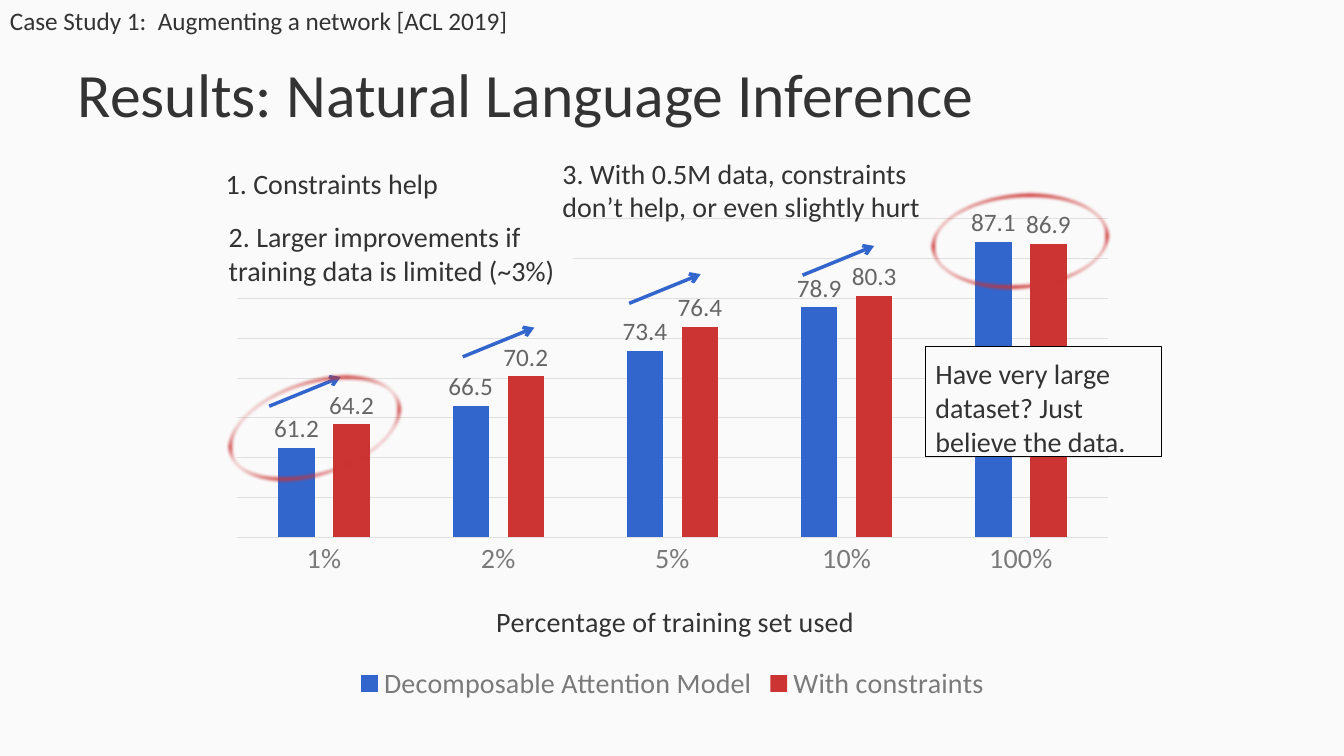
from pptx import Presentation
from pptx import util as u
from pptx.chart.data import CategoryChartData
from pptx.dml.color import RGBColor
from pptx.enum import chart as ch, shapes, text
from pptx.oxml import parse_xml
from pptx.oxml.ns import nsdecls, qn

PX = 9144
INK, GRAY, PALE, BACK = "333333", "7A7A7A", "E0E0E0", "FAFAFA"
BLUE, RED = "3366CC", "CC3333"


def px(*nums):
    return [u.Emu(n * PX) for n in nums]


def color(code):
    return RGBColor.from_string(code)


def place(node, index, x, y, w=None, h=None):
    for old in node.findall(qn("c:layout")):
        node.remove(old)
    inner = '<c:layoutTarget val="inner"/>' if w else ""
    size = f'<c:w val="{w}"/><c:h val="{h}"/>' if w else ""
    node.insert(index, parse_xml(
        f'<c:layout {nsdecls("c")}><c:manualLayout>{inner}'
        '<c:xMode val="edge"/><c:yMode val="edge"/>'
        f'<c:x val="{x}"/><c:y val="{y}"/>{size}</c:manualLayout></c:layout>'))


class Deck:
    face = "Calibri"

    def __init__(self, wide, high):
        self.prs = Presentation()
        self.prs.slide_width, self.prs.slide_height = px(wide, high)
        self.slide = self.prs.slides.add_slide(self.prs.slide_layouts[5])
        fill = self.slide.background.fill
        fill.solid()
        fill.fore_color.rgb = color(BACK)

    def font(self, font, size, code=INK):
        font.name, font.size, font.bold = self.face, u.Pt(size), False
        font.color.rgb = color(code)

    def stroke(self, line, code, width):
        line.color.rgb = color(code)
        line.width = u.Pt(width)

    def words(self, shape, words, size):
        frame = shape.text_frame
        frame.text = words
        para = frame.paragraphs[0]
        para.alignment = text.PP_ALIGN.LEFT
        self.font(para.runs[0].font, size)
        return frame

    def title(self, words, *box):
        head = self.slide.shapes.title
        head.left, head.top, head.width, head.height = px(*box)
        frame = self.words(head, words, 44)
        frame.vertical_anchor = text.MSO_ANCHOR.MIDDLE

    def label(self, words, size, wrap, *box):
        shape = self.slide.shapes.add_textbox(*px(*box))
        frame = self.words(shape, words, size)
        frame.word_wrap = wrap
        frame.auto_size = text.MSO_AUTO_SIZE.SHAPE_TO_FIT_TEXT

    def note(self, words, *box, edge=None):
        shape = self.slide.shapes.add_shape(shapes.MSO_SHAPE.RECTANGLE, *px(*box))
        shape.shadow.inherit = False
        shape.fill.solid()
        shape.fill.fore_color.rgb = color(BACK)
        if edge:
            self.stroke(shape.line, edge, 0.75)
        else:
            shape.line.fill.background()
        frame = self.words(shape, words, 20)
        frame.word_wrap = True
        frame.vertical_anchor = text.MSO_ANCHOR.TOP
        frame.margin_left, frame.margin_top, frame.margin_right, frame.margin_bottom = px(10, 10, 10, 10)

    def ring(self, left, top, turn):
        shape = self.slide.shapes.add_shape(shapes.MSO_SHAPE.OVAL, *px(left, top, 172, 90))
        shape.rotation = turn
        shape.fill.background()
        self.stroke(shape.line, RED, 7)
        shape.shadow.inherit = False
        effects = shape._element.spPr.find(qn("a:effectLst"))
        effects.append(parse_xml(f'<a:softEdge {nsdecls("a")} rad="31750"/>'))

    def arrows(self, starts, run, rise):
        group = self.slide.shapes.add_group_shape()
        for x, y in starts:
            arrow = group.shapes.add_connector(
                shapes.MSO_CONNECTOR.STRAIGHT, *px(x, y, x + run, y - rise))
            self.stroke(arrow.line, BLUE, 2.5)
            props = arrow._element.spPr
            props.find(qn("a:ln")).append(
                parse_xml(f'<a:tailEnd {nsdecls("a")} type="arrow"/>'))
            props.append(parse_xml(f'<a:effectLst {nsdecls("a")}/>'))

    def bars(self, shares, rows, caption, *box):
        data = CategoryChartData()
        data.categories = shares
        data.categories.number_format = "0%"
        for name, _, vals in rows:
            data.add_series(name, vals)
        chart = self.slide.shapes.add_chart(
            ch.XL_CHART_TYPE.COLUMN_CLUSTERED, *px(*box), data).chart
        self.font(chart.font, 10)
        chart.has_title = False
        chart.has_legend = True
        chart.legend.position = ch.XL_LEGEND_POSITION.BOTTOM
        chart.legend.include_in_layout = False
        self.font(chart.legend.font, 20, GRAY)

        plot = chart.plots[0]
        plot.gap_width, plot.overlap = 227, -51
        plot.vary_by_categories = False
        for series, (_, code, _) in zip(plot.series, rows):
            series.format.fill.solid()
            series.format.fill.fore_color.rgb = color(code)
            tags = series.data_labels
            tags.show_value = True
            tags.number_format, tags.number_format_is_linked = "0.0", False
            tags.position = ch.XL_LABEL_POSITION.OUTSIDE_END
            self.font(tags.font, 18, "666666")

        cat = chart.category_axis
        cat.major_tick_mark = ch.XL_TICK_MARK.NONE
        cat.tick_labels.number_format = "0%"
        cat.tick_labels.number_format_is_linked = False
        self.font(cat.tick_labels.font, 20, GRAY)
        self.stroke(cat.format.line, PALE, 0.75)
        frame = cat.axis_title.text_frame
        frame.text = caption
        self.font(frame.paragraphs[0].runs[0].font, 20)

        val = chart.value_axis
        val.visible = False
        val.minimum_scale, val.maximum_scale, val.major_unit = 50, 90, 5
        val.has_major_gridlines = True
        self.stroke(val.major_gridlines.format.line, PALE, 0.75)

        place(chart._chartSpace.chart.plotArea, 0, 0.02, 0.02, 0.96, 0.64)
        place(cat.axis_title._element, 1, 0.3, 0.78)


def main():
    deck = Deck(1333, 750)
    deck.title("Results: Natural Language Inference", 67, 30, 1200, 125)
    deck.bars(
        [0.01, 0.02, 0.05, 0.1, 1.0],
        [("Decomposable Attention Model", BLUE, [61.2, 66.5, 73.4, 78.9, 87.1]),
         ("With constraints", RED, [64.2, 70.2, 76.4, 80.3, 86.9])],
        "Percentage of training set used", 217, 206, 900, 495)
    deck.arrows([(267, 403), (459, 354), (624, 301), (796, 273)], 71, 29)
    deck.note("1. Constraints help", 214, 155, 315, 45)
    deck.note("2. Larger improvements if training data is limited (~3%)",
              217, 208, 351, 73)
    deck.ring(226, 380, 342.4)
    deck.label("3. With 0.5M data, constraints don’t help, or even slightly hurt",
               20, True, 548, 150, 380, 77)
    deck.ring(926, 194, 355.2)
    deck.note("Have very large dataset? Just believe the data.",
              918, 344, 234, 109, edge="000000")
    deck.label("Case Study 1:  Augmenting a network [ACL 2019]",
               18, False, 0, 0, 520, 40)
    deck.prs.save("out.pptx")


if __name__ == "__main__":
    main()
